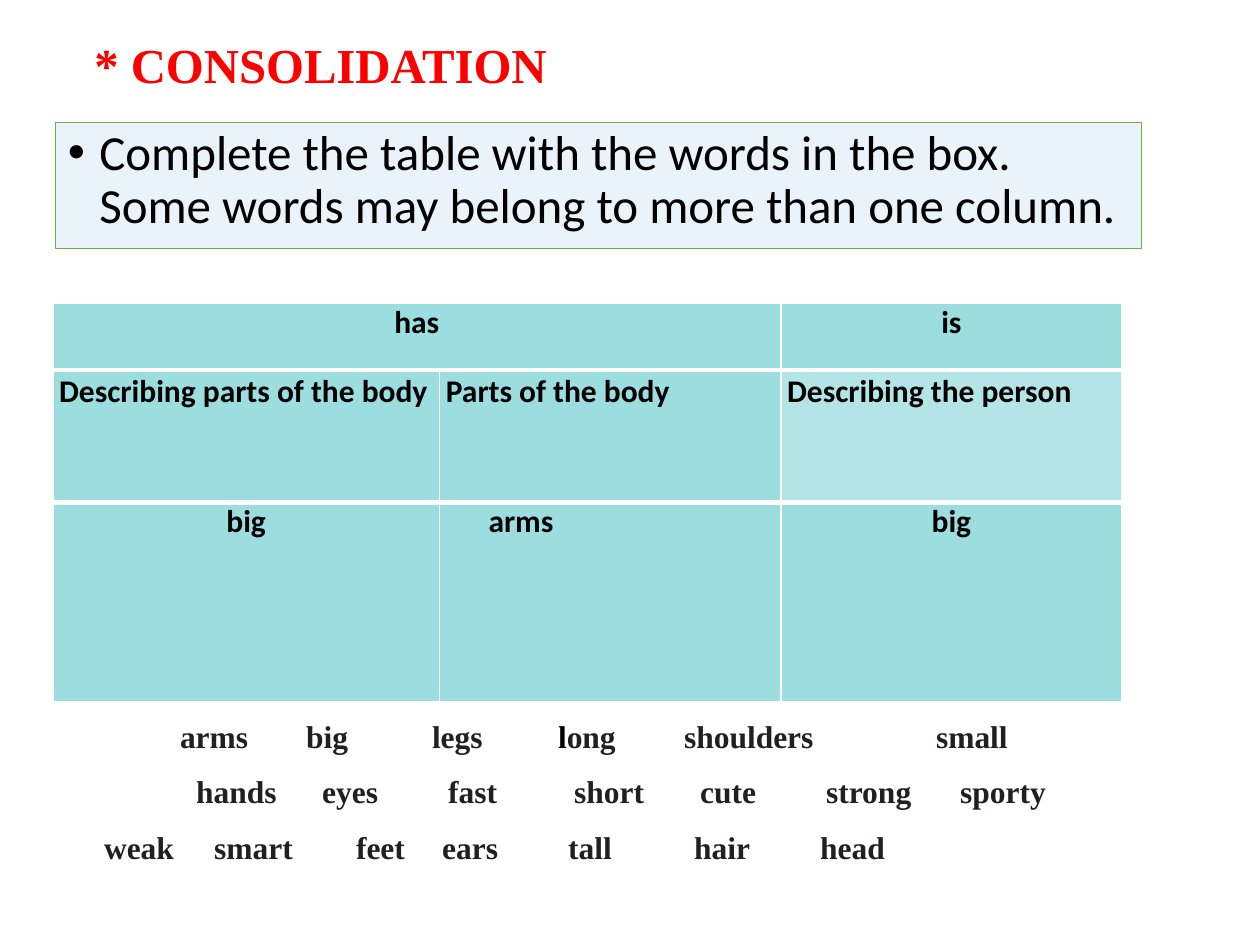
from dataclasses import dataclass

from lxml import etree
from pptx import Presentation
from pptx.dml.color import RGBColor
from pptx.enum.shapes import MSO_SHAPE
from pptx.enum.text import MSO_ANCHOR, PP_ALIGN
from pptx.oxml.ns import qn
from pptx.util import Pt

LEFT, CENTER = PP_ALIGN.LEFT, PP_ALIGN.CENTER
TOP = MSO_ANCHOR.TOP
RECT = MSO_SHAPE.RECTANGLE
SANS, SERIF = "Calibri", "Times New Roman"
COLORS = {
    "title": "FF0000", "black": "000000", "ink": "231F20",
    "task": "EAF2FA", "edge": "70AD47", "cell": "9CDDE0", "white": "FFFFFF",
}
TAB = 72


@dataclass
class Cell:
    row: int
    col: int
    text: str
    align: int = CENTER
    inset: float = 0
    alpha: int = 100


@dataclass
class Line:
    words: list[str]
    stops: list[float]


CELLS = [
    Cell(0, 0, "has"),
    Cell(0, 1, ""),
    Cell(0, 2, "is"),
    Cell(1, 0, "Describing parts of the body", LEFT, 3.6),
    Cell(1, 1, "Parts of the body", LEFT, 3.6),
    Cell(1, 2, "Describing the person", LEFT, 3.6, 76),
    Cell(2, 0, "big"),
    Cell(2, 1, "arms", LEFT, 28),
    Cell(2, 2, "big"),
]
COLS = [221, 195, 195]
ROWS = [38, 75.5, 114]
LINES = [
    Line(["arms", "big", "legs", "long", "shoulders", "small"],
         [66.2 + TAB * i for i in (0, 1, 2, 3, 4, 6)]),
    Line(["hands", "eyes", "fast", "short", "cute", "strong", "sporty"],
         [75.4 + TAB * i for i in range(6)] + [512]),
    Line(["weak", "smart", "feet", "ears", "tall", "hair", "head"],
         [22.8, 85.7, 166.8] + [TAB * i for i in range(3, 7)]),
]


def tint(name: str) -> RGBColor:
    return RGBColor.from_string(COLORS[name])


def write(para, text: str, *, font: str = SANS, size: float = 18,
          color: str = "black", bold: bool = True, align: int = LEFT,
          space: float = 1, after: float = 0) -> None:
    """Append a run to a paragraph and format both."""
    para.alignment = align
    para.line_spacing = space
    para.space_before, para.space_after = Pt(0), Pt(after)
    run = para.add_run()
    run.text = text
    run.font.name, run.font.size, run.font.bold = font, Pt(size), bold
    run.font.color.rgb = tint(color)


def pad(frame, left: float, top: float) -> None:
    frame.margin_left = frame.margin_right = Pt(left)
    frame.margin_top = frame.margin_bottom = Pt(top)
    frame.vertical_anchor = TOP
    frame.word_wrap = True


def add_box(slide, left: float, top: float, width: float, height: float):
    return slide.shapes.add_textbox(Pt(left), Pt(top), Pt(width), Pt(height))


def add_task(slide) -> None:
    box = slide.shapes.add_shape(RECT, Pt(31.7), Pt(69.8), Pt(620.6), Pt(72))
    box.shadow.inherit = False
    box.fill.solid()
    box.fill.fore_color.rgb = tint("task")
    box.line.color.rgb = tint("edge")
    box.line.width = Pt(0.5)
    pad(box.text_frame, 7.2, 3.6)
    para = box.text_frame.paragraphs[0]
    write(para, "Complete the table with the words in the box. "
          "Some words may belong to more than one column.",
          size=28, bold=False, space=0.9)
    props = para._p.get_or_add_pPr()
    props.set("marL", str(Pt(18)))
    props.set("indent", str(Pt(-18)))
    etree.SubElement(props, qn("a:buFont"), typeface="Arial")
    etree.SubElement(props, qn("a:buChar"), char="•")


def edge_cell(cell, row: int) -> None:
    """Draw white borders, thick between rows."""
    props = cell._tc.get_or_add_tcPr()
    wide = {"lnL": 1, "lnR": 1, "lnT": 3 if row else 1,
            "lnB": 3 if row < len(ROWS) - 1 else 1}
    for tag, width in wide.items():
        line = etree.SubElement(props, qn(f"a:{tag}"), w=str(Pt(width)))
        fill = etree.SubElement(line, qn("a:solidFill"))
        etree.SubElement(fill, qn("a:srgbClr"), val=COLORS["white"])


def fill_cell(cell, data: Cell) -> None:
    edge_cell(cell, data.row)
    cell.fill.solid()
    cell.fill.fore_color.rgb = tint("cell")
    if data.alpha < 100:
        shade = cell._tc.tcPr.find(".//" + qn("a:solidFill") + "[last()]")
        shade = cell._tc.tcPr.find(qn("a:solidFill")).find(qn("a:srgbClr"))
        etree.SubElement(shade, qn("a:alpha"), val=str(data.alpha * 1000))
    cell.margin_left = Pt(data.inset)
    cell.margin_right = cell.margin_top = cell.margin_bottom = Pt(0)
    if data.text:
        write(cell.text_frame.paragraphs[0], data.text, align=data.align,
              space=1.07 if data.row == 1 else 1)


def add_grid(slide) -> None:
    grid = slide.shapes.add_table(len(ROWS), len(COLS), Pt(30.2), Pt(173.5),
                                  Pt(sum(COLS)), Pt(sum(ROWS))).table
    grid.first_row = grid.horz_banding = False
    for col, width in zip(grid.columns, COLS):
        col.width = Pt(width)
    for row, height in zip(grid.rows, ROWS):
        row.height = Pt(height)
    for data in CELLS:
        fill_cell(grid.cell(data.row, data.col), data)
    grid.cell(0, 0).merge(grid.cell(0, 1))


def add_words(slide) -> None:
    frame = add_box(slide, 36.7, 409.7, 635.8, 93.6).text_frame
    pad(frame, 0, 0)
    look = {"font": SERIF, "after": 10}
    for i, line in enumerate(LINES):
        para = frame.add_paragraph() if i else frame.paragraphs[0]
        text = "\t" + "\t".join(line.words)
        head, mark, tail = text.partition("long")
        write(para, head, color="ink", **look)
        if mark:
            write(para, mark[0], **look)
            write(para, mark[1:] + tail, color="ink", **look)
        tabs = etree.SubElement(para._p.get_or_add_pPr(), qn("a:tabLst"))
        for stop in line.stops:
            etree.SubElement(tabs, qn("a:tab"), pos=str(Pt(stop)), algn="l")


def main() -> None:
    deck = Presentation()
    deck.slide_width, deck.slide_height = Pt(720), Pt(540)
    slide = deck.slides.add_slide(deck.slide_layouts[6])
    title = add_box(slide, 46.8, 18, 293.8, 69.1).text_frame
    pad(title, 7.2, 5.7)
    write(title.paragraphs[0], "* CONSOLIDATION", font=SERIF, size=27.9,
          color="title", space=0.9)
    add_task(slide)
    add_grid(slide)
    add_words(slide)
    deck.save("out.pptx")


if __name__ == "__main__":
    main()
